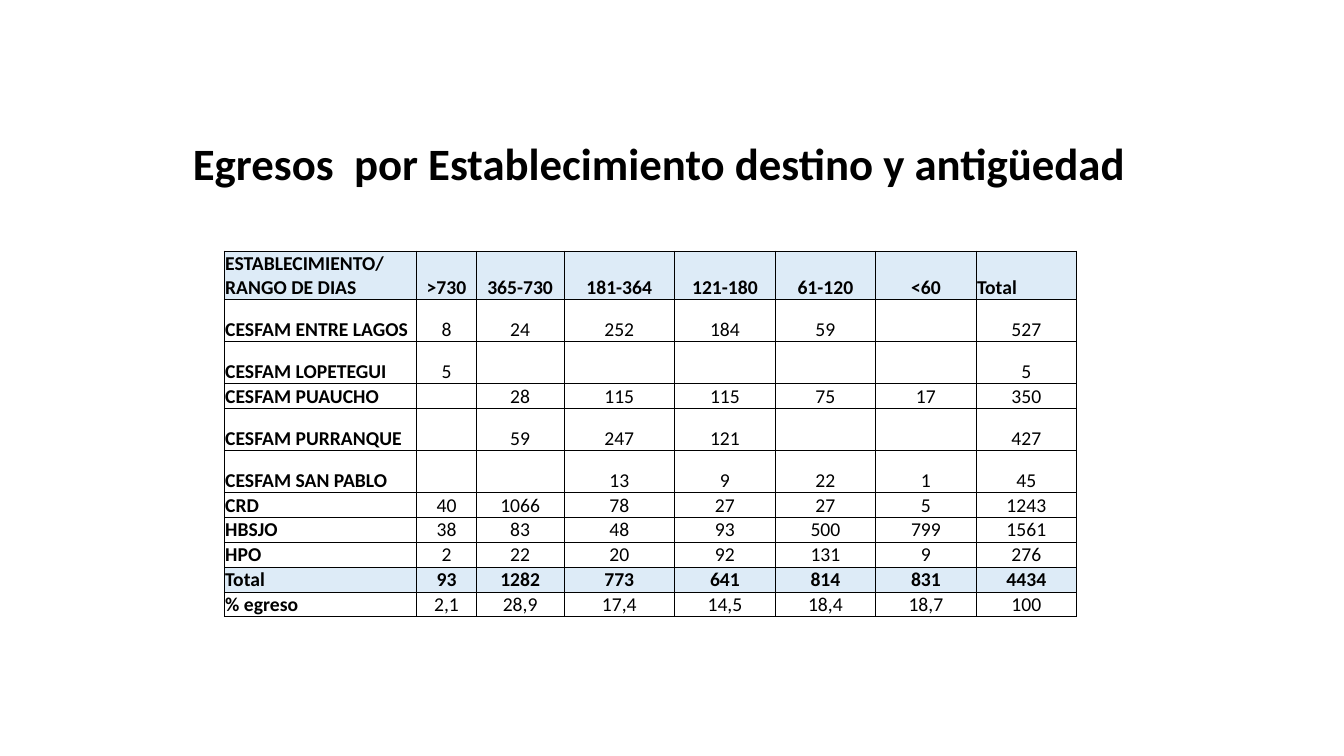
"""Build a slide with a table of discharges by destination and waiting time."""
from lxml import etree
from pptx import Presentation
from pptx.dml.color import RGBColor
from pptx.enum import text
from pptx.oxml import ns
from pptx.util import Pt

TITLE = "Egresos  por Establecimiento destino y antigüedad"
ROWS = [
    ("ESTABLECIMIENTO/ RANGO DE DIAS", ">730", "365-730", "181-364", "121-180", "61-120", "<60", "Total"),
    ("CESFAM ENTRE LAGOS", "8", "24", "252", "184", "59", "", "527"),
    ("CESFAM LOPETEGUI", "5", "", "", "", "", "", "5"),
    ("CESFAM PUAUCHO", "", "28", "115", "115", "75", "17", "350"),
    ("CESFAM PURRANQUE", "", "59", "247", "121", "", "", "427"),
    ("CESFAM SAN PABLO", "", "", "13", "9", "22", "1", "45"),
    ("CRD", "40", "1066", "78", "27", "27", "5", "1243"),
    ("HBSJO", "38", "83", "48", "93", "500", "799", "1561"),
    ("HPO", "2", "22", "20", "92", "131", "9", "276"),
    ("Total", "93", "1282", "773", "641", "814", "831", "4434"),
    ("% egreso", "2,1", "28,9", "17,4", "14,5", "18,4", "18,7", "100"),
]
WIDTHS = [137.4, 42.8, 62.4, 79.2] + [71.8] * 4
TALL, SHORT = 30, 15
TALL_ROWS = {0, 1, 2, 4, 5}
SHADED_ROWS = {0, 9}
TITLE_BOX = {"left": 57, "top": 87, "width": 828, "height": 63.4}
CELL_FORMAT = {
    "margin_left": Pt(0.7), "margin_right": Pt(0.7), "margin_top": Pt(0.7),
    "margin_bottom": Pt(0), "vertical_anchor": text.MSO_ANCHOR.BOTTOM,
}


def color(value):
    return RGBColor.from_string(value)


def apply(target, values):
    for name, value in values.items():
        setattr(target, name, value)


def write(para, words, size, bold, align):
    para.alignment = align
    if not words:
        end = etree.SubElement(para._p, ns.qn("a:endParaRPr"))
        end.set("sz", str(size * 100))
        return
    span = para.add_run()
    span.text = words
    apply(span.font, {"name": "Calibri", "size": Pt(size), "bold": bold})
    span.font.color.rgb = color("000000")


def add_borders(cell):
    properties = cell._tc.get_or_add_tcPr()
    for side in ("lnL", "lnR", "lnT", "lnB"):
        line = etree.SubElement(properties, ns.qn("a:" + side), w=str(Pt(0.5)))
        fill = etree.SubElement(line, ns.qn("a:solidFill"))
        etree.SubElement(fill, ns.qn("a:srgbClr"), val="000000")


def add_title(page):
    box = page.shapes.title
    apply(box, {name: Pt(value) for name, value in TITLE_BOX.items()})
    box.text_frame.vertical_anchor = text.MSO_ANCHOR.MIDDLE
    para = box.text_frame.paragraphs[0]
    write(para, TITLE, 32, True, text.PP_ALIGN.CENTER)
    para.line_spacing = 0.9


def add_discharges(page):
    heights = [TALL if r in TALL_ROWS else SHORT for r in range(len(ROWS))]
    table = page.shapes.add_table(
        len(ROWS), len(WIDTHS), Pt(160.2), Pt(179.3), Pt(sum(WIDTHS)), Pt(sum(heights))
    ).table
    apply(table, {"first_row": False, "horz_banding": False})
    for column, width in zip(table.columns, WIDTHS):
        column.width = Pt(width)
    for r, values in enumerate(ROWS):
        table.rows[r].height = Pt(heights[r])
        shaded = r in SHADED_ROWS
        for c, words in enumerate(values):
            cell = table.cell(r, c)
            apply(cell, CELL_FORMAT)
            add_borders(cell)
            if shaded:
                cell.fill.solid()
                cell.fill.fore_color.rgb = color("DDEBF7")
            else:
                cell.fill.background()
            left = c == 0 or (r == 0 and c == len(WIDTHS) - 1)
            align = text.PP_ALIGN.LEFT if left else text.PP_ALIGN.CENTER
            write(cell.text_frame.paragraphs[0], words, 14, shaded or c == 0, align)


def main():
    deck = Presentation()
    apply(deck, {"slide_width": Pt(960), "slide_height": Pt(540)})
    page = deck.slides.add_slide(deck.slide_layouts[5])
    add_title(page)
    add_discharges(page)
    deck.save("out.pptx")


if __name__ == "__main__":
    main()
